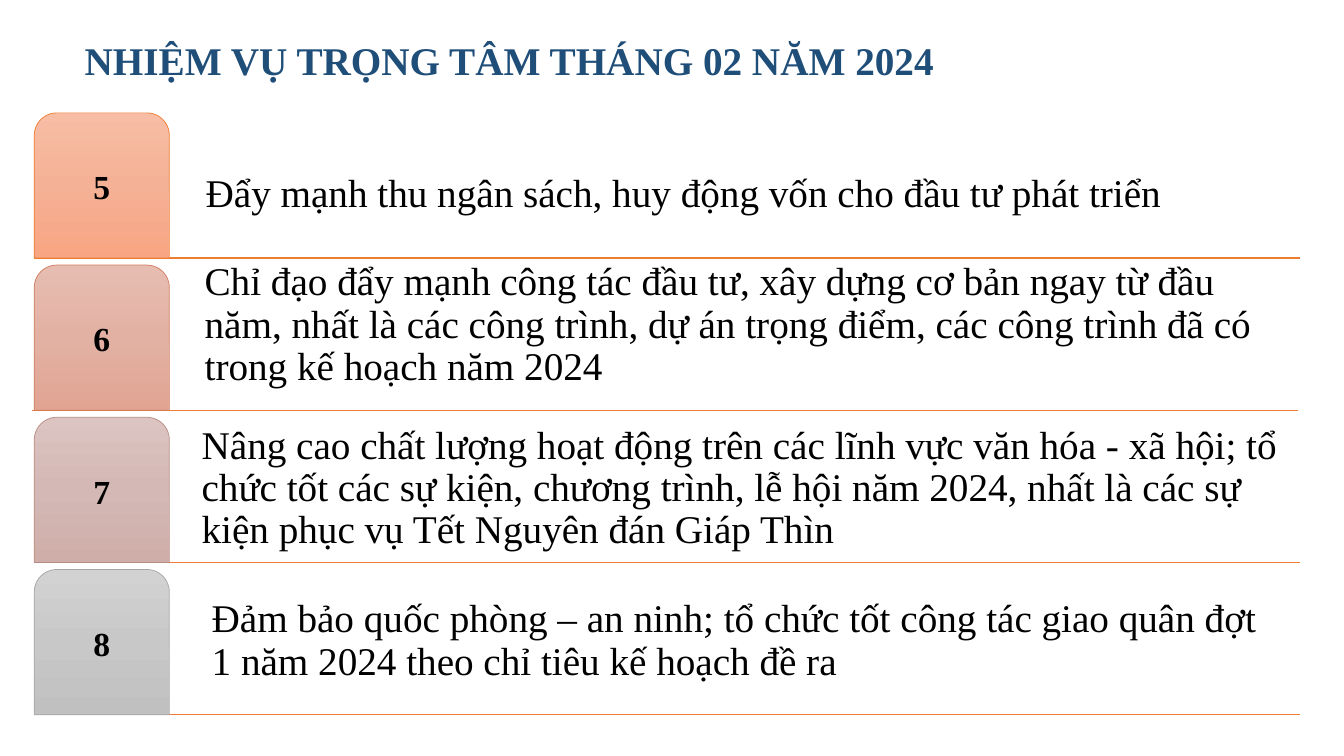
from copy import deepcopy
from dataclasses import dataclass

from pptx import Presentation
from pptx.dml.color import RGBColor
from pptx.enum import shapes, text
from pptx.oxml import ns
from pptx.util import Inches, Pt
from lxml import etree


@dataclass(frozen=True)
class Theme:
    font: str = "Times New Roman"
    title_color: str = "1F4E79"
    text_color: str = "000000"
    rule_color: str = "ED7D31"
    text_size: int = 28
    number_size: int = 24


@dataclass(frozen=True)
class Task:
    number: int
    wording: str
    box: tuple[float, float, float, float]
    gradient: tuple[str, str, str]
    outline: str
    rule_left: float = 0.34


THEME = Theme()
TAB_LEFT, TAB_TOP, TAB_WIDTH, TAB_HEIGHT = 0.34, 1.12, 1.34, 1.44
ROW_PITCH = 1.51
RULE_LENGTH = 12.55

TASKS = (
    Task(5, "Đẩy mạnh thu ngân sách, huy động vốn cho đầu tư phát triển",
         (1.98, 1.45, 10.75, 0.75), ("F7BDA5", "F5B196", "F8A582"), "ED7D31"),
    Task(6, "Chỉ đạo đẩy mạnh công tác đầu tư, xây dựng cơ bản ngay từ đầu năm, "
         "nhất là các công trình, dự án trọng điểm, các công trình đã có "
         "trong kế hoạch năm 2024",
         (1.97, 2.74, 10.95, 1.18), ("E7BDB1", "E2B1A3", "E1A493"), "D17B5C", 0.32),
    Task(7, "Nâng cao chất lượng hoạt động trên các lĩnh vực văn hóa - xã hội; "
         "tổ chức tốt các sự kiện, chương trình, lễ hội năm 2024, "
         "nhất là các sự kiện phục vụ Tết Nguyên đán Giáp Thìn",
         (1.94, 4.1, 11.06, 1.44), ("DBC4C1", "D3B8B5", "CFAEA9"), "B98A82"),
    Task(8, "Đảm bảo quốc phòng – an ninh; tổ chức tốt công tác giao quân đợt 1 "
         "năm 2024 theo chỉ tiêu kế hoạch đề ra",
         (2.04, 5.89, 10.6, 0.95), ("D2D2D2", "C8C8C8", "C0C0C0"), "A5A5A5"),
)


def write(frame, wording: str, size: int, color: str, bold: bool = False):
    """Add one run to the frame's first paragraph and return that paragraph."""
    frame.word_wrap = True
    paragraph = frame.paragraphs[0]
    run = paragraph.add_run()
    run.text = wording
    run.font.name = THEME.font
    run.font.size = Pt(size)
    run.font.bold = bold
    run.font.color.rgb = RGBColor.from_string(color)
    return paragraph


def set_margins(frame, margin: float) -> None:
    frame.margin_left = frame.margin_right = Inches(margin)
    frame.margin_top = frame.margin_bottom = Inches(margin)


def fill_downward(fill, colors: tuple[str, str, str]) -> None:
    """Apply an evenly spaced gradient running from top to bottom."""
    fill.gradient()
    fill.gradient_angle = 270
    stop_list = fill._xPr.find(ns.qn("a:gradFill")).find(ns.qn("a:gsLst"))
    stop_list.insert(1, deepcopy(stop_list[0]))
    for index, (stop, color) in enumerate(zip(fill.gradient_stops, colors)):
        stop.position = index / 2
        stop.color.rgb = RGBColor.from_string(color)


def add_title(slide) -> None:
    title = slide.shapes.title
    title.left, title.top = Inches(0.74), Inches(0.31)
    title.width, title.height = Inches(8.7), Inches(0.57)
    frame = title.text_frame
    frame.auto_size = text.MSO_AUTO_SIZE.NONE
    frame.vertical_anchor = text.MSO_ANCHOR.TOP
    paragraph = write(frame, "NHIỆM VỤ TRỌNG TÂM THÁNG 02 NĂM 2024",
                      THEME.text_size, THEME.title_color, bold=True)
    paragraph.alignment = text.PP_ALIGN.LEFT


def add_rule(slide, left: float, top: float) -> None:
    rule = slide.shapes.add_connector(
        shapes.MSO_CONNECTOR.STRAIGHT, Inches(left), Inches(top),
        Inches(left + RULE_LENGTH), Inches(top))
    rule.line.color.rgb = RGBColor.from_string(THEME.rule_color)
    rule.line.width = Pt(1)
    etree.SubElement(rule._element.spPr, ns.qn("a:effectLst"))


def add_number_tab(slide, task: Task, top: float) -> None:
    tab = slide.shapes.add_shape(
        shapes.MSO_SHAPE.ROUND_2_SAME_RECTANGLE, Inches(TAB_LEFT), Inches(top),
        Inches(TAB_WIDTH), Inches(TAB_HEIGHT))
    tab.shadow.inherit = False
    fill_downward(tab.fill, task.gradient)
    tab.line.color.rgb = RGBColor.from_string(task.outline)
    tab.line.width = Pt(0.5)
    frame = tab.text_frame
    set_margins(frame, 0.05)
    frame.vertical_anchor = text.MSO_ANCHOR.MIDDLE
    paragraph = write(frame, str(task.number), THEME.number_size,
                      THEME.text_color, bold=True)
    paragraph.alignment = text.PP_ALIGN.CENTER
    paragraph.line_spacing = 0.9


def add_wording(slide, task: Task) -> None:
    box = slide.shapes.add_textbox(*map(Inches, task.box))
    frame = box.text_frame
    set_margins(frame, 0.06)
    frame.vertical_anchor = text.MSO_ANCHOR.BOTTOM
    paragraph = write(frame, task.wording, THEME.text_size, THEME.text_color)
    paragraph.line_spacing = 0.9


def main() -> None:
    presentation = Presentation()
    presentation.slide_width = Inches(13.33)
    presentation.slide_height = Inches(7.5)
    title_only = presentation.slide_layouts[5]
    slide = presentation.slides.add_slide(title_only)
    add_title(slide)
    for row, task in enumerate(TASKS):
        top = TAB_TOP + row * ROW_PITCH
        add_rule(slide, task.rule_left, top + TAB_HEIGHT)
        add_wording(slide, task)
        add_number_tab(slide, task, top)
    presentation.save("out.pptx")


if __name__ == "__main__":
    main()
